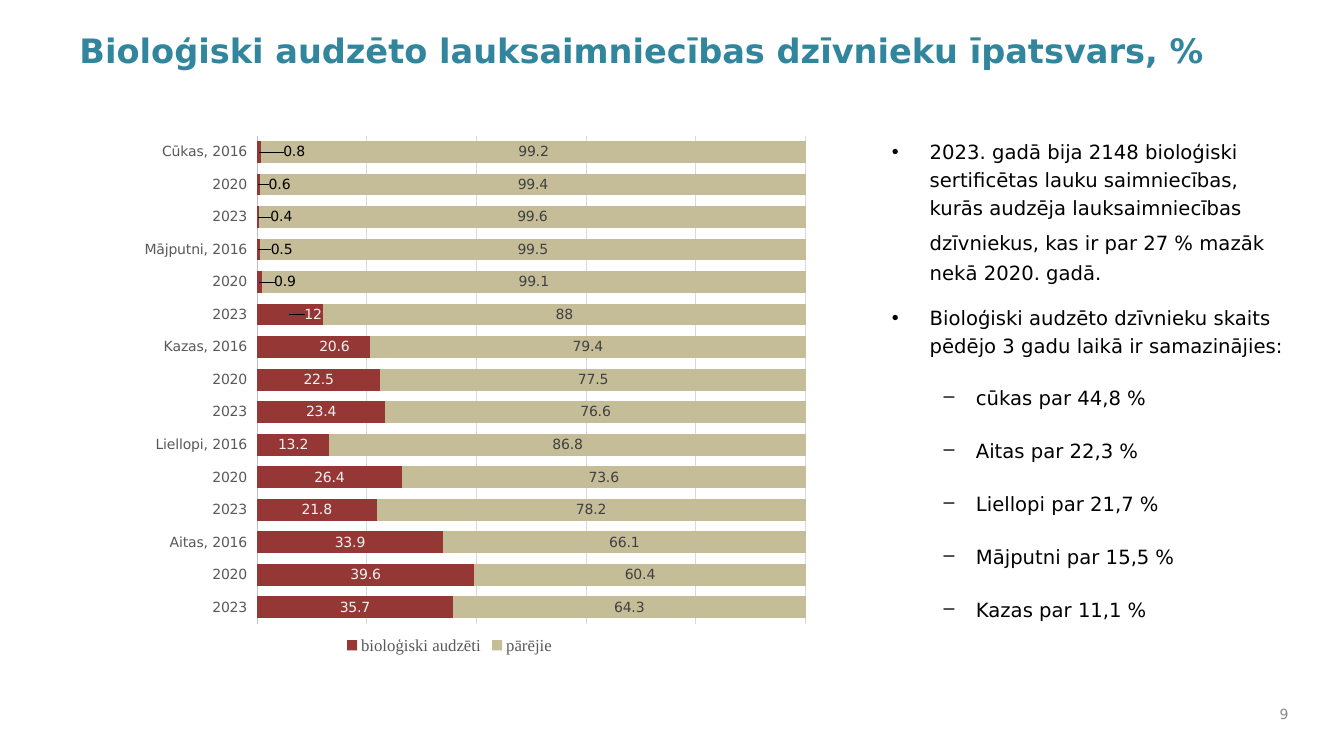
"""Build a slide on the share of organically raised farm animals."""
from lxml import etree
from pptx import Presentation
from pptx.chart.data import CategoryChartData
from pptx.dml.color import RGBColor
from pptx.enum.chart import XL_CHART_TYPE, XL_LABEL_POSITION, XL_LEGEND_POSITION, XL_TICK_LABEL_POSITION, XL_TICK_MARK
from pptx.enum.text import MSO_ANCHOR, PP_ALIGN
from pptx.oxml.ns import qn
from pptx.util import Pt

STACKED = XL_CHART_TYPE.BAR_STACKED_100
CENTER = XL_LABEL_POSITION.CENTER
BOTTOM = XL_LEGEND_POSITION.BOTTOM
LOW = XL_TICK_LABEL_POSITION.LOW
NONE = XL_TICK_MARK.NONE
TOP, MIDDLE = MSO_ANCHOR.TOP, MSO_ANCHOR.MIDDLE
LEFT, RIGHT = PP_ALIGN.LEFT, PP_ALIGN.RIGHT

HEX = {
    "teal": "31859C", "black": "000000", "gray": "898989", "axis": "595959",
    "line": "BFBFBF", "grid": "D9D9D9", "red": "953735", "sand": "C4BD97",
    "pale": "F2F2F2", "dark": "404040",
}
SANS, SERIF = "DejaVu Sans", "Times New Roman"


def style(font, size, color, name=SANS, bold=False):
    for key, value in {"size": Pt(size), "name": name, "bold": bold}.items():
        setattr(font, key, value)
    font.color.rgb = RGBColor.from_string(HEX[color])


def layout(node, spot, **values):
    outer = etree.Element(qn("c:layout"))
    inner = etree.SubElement(outer, qn("c:manualLayout"))
    for key, value in values.items():
        etree.SubElement(inner, qn("c:" + key)).set("val", str(value))
    for old in node.findall(qn("c:layout")):
        node.remove(old)
    node.insert(spot, outer)


deck = Presentation()
deck.slide_width, deck.slide_height = Pt(960), Pt(540)
slide = deck.slides.add_slide(deck.slide_layouts[6])

frames = []
for box, anchor in [
    ((49.7, 18, 860.4, 54), TOP),
    ((895.7, 498.2, 31.7, 23.8), MIDDLE),
    ((630, 92.9, 298.1, 364.3), TOP),
]:
    frame = slide.shapes.add_textbox(*map(Pt, box)).text_frame
    frame.word_wrap, frame.vertical_anchor = True, anchor
    frames.append(frame)
title, number, body = frames

for frame, text, align, look in [
    (title, "Bioloģiski audzēto lauksaimniecības dzīvnieku īpatsvars, %", LEFT,
     {"size": 24, "color": "teal", "bold": True}),
    (number, "9", RIGHT, {"size": 10, "color": "gray"}),
]:
    para = frame.paragraphs[0]
    para.alignment = align
    run = para.add_run()
    run.text = text
    style(run.font, **look)

BULLETS = [("•", 27, -27), ("–", 60, -23)]
POINTS = [
    (0, "2023. gadā bija 2148 bioloģiski sertificētas lauku saimniecības, kurās audzēja "
        "lauksaimniecības dzīvniekus, kas ir par 27", "% mazāk nekā 2020. gadā."),
    (0, "Bioloģiski audzēto dzīvnieku skaits pēdējo 3 gadu laikā ir samazinājies:", ""),
    (1, "cūkas par 44,8", "%"),
    (1, "Aitas par 22,3", "%"),
    (1, "Liellopi par 21,7", "%"),
    (1, "Mājputni par 15,5", "%"),
    (1, "Kazas par 11,1", "%"),
]
for row, (level, head, tail) in enumerate(POINTS):
    para = body.add_paragraph() if row else body.paragraphs[0]
    form = {"level": level, "line_spacing": 1.2, "space_before": Pt(6), "space_after": Pt(6)}
    for key, value in form.items():
        setattr(para, key, value)
    mark, left, hang = BULLETS[level]
    props = para._p.get_or_add_pPr()
    props.set("marL", str(Pt(left)))
    props.set("indent", str(Pt(hang)))
    etree.SubElement(props, qn("a:buFont")).set("typeface", "Arial")
    etree.SubElement(props, qn("a:buChar")).set("char", mark)
    parts = [(head, 14, SANS)]
    if tail:
        parts += [(chr(160), 18, "Cabin"), (tail, 14, SANS)]
    for text, size, name in parts:
        run = para.add_run()
        run.text = text
        style(run.font, size, "black", name)

GROUPS = ["Aitas", "Liellopi", "Kazas", "Mājputni", "Cūkas"]
SHARES = [35.7, 39.6, 33.9, 21.8, 26.4, 13.2, 23.4, 22.5, 20.6, 12, 0.9, 0.5, 0.4, 0.6, 0.8]
data = CategoryChartData()
data.categories = [name for group in GROUPS for name in ("2023", "2020", f"{group}, 2016")]
data.add_series("bioloģiski audzēti", SHARES)
data.add_series("pārējie", [round(100 - share, 1) for share in SHARES])
area = map(Pt, (43.9, 77.8, 554.4, 392.4))
chart = slide.shapes.add_chart(STACKED, *area, data).chart
style(chart.font, 10, "black", SERIF)
chart.has_title = False
chart.has_legend = True
chart.legend.position = BOTTOM
chart.legend.include_in_layout = False
style(chart.legend.font, 12, "axis", SERIF)
layout(chart._chartSpace.chart.plotArea, 0, layoutTarget="inner", xMode="edge",
       yMode="edge", x=0.252, y=0.049, w=0.707, h=0.888)

cats, vals = chart.category_axis, chart.value_axis
for key, value in {"major_tick_mark": NONE, "minor_tick_mark": NONE, "tick_label_position": LOW}.items():
    setattr(cats, key, value)
style(cats.tick_labels.font, 10, "axis")
vals.visible, vals.major_unit, vals.has_major_gridlines = False, 0.2, True
for line, color in [(cats.format.line, "line"), (vals.major_gridlines.format.line, "grid")]:
    line.width = Pt(0.75)
    line.color.rgb = RGBColor.from_string(HEX[color])

plot = chart.plots[0]
for key, value in {"gap_width": 50, "overlap": 100, "vary_by_categories": False}.items():
    setattr(plot, key, value)
for bars, fill, ink in zip(plot.series, ("red", "sand"), ("pale", "dark")):
    bars.format.fill.solid()
    bars.format.fill.fore_color.rgb = RGBColor.from_string(HEX[fill])
    labels = bars.data_labels
    labels.show_value, labels.position = True, CENTER
    style(labels.font, 10, ink)

SHIFTS = [0.027, 0.03, 0.033, 0.03, 0.03, 0.027, 0.045]
small = plot.series[0]
for spot, shift in enumerate(SHIFTS, 8):
    label = small.points[spot].data_label
    style(label.font, 10, "pale" if spot < 10 else "black")
    label.position = CENTER
    layout(label._dLbl, 1, x=shift, y=0)

deck.save("out.pptx")
